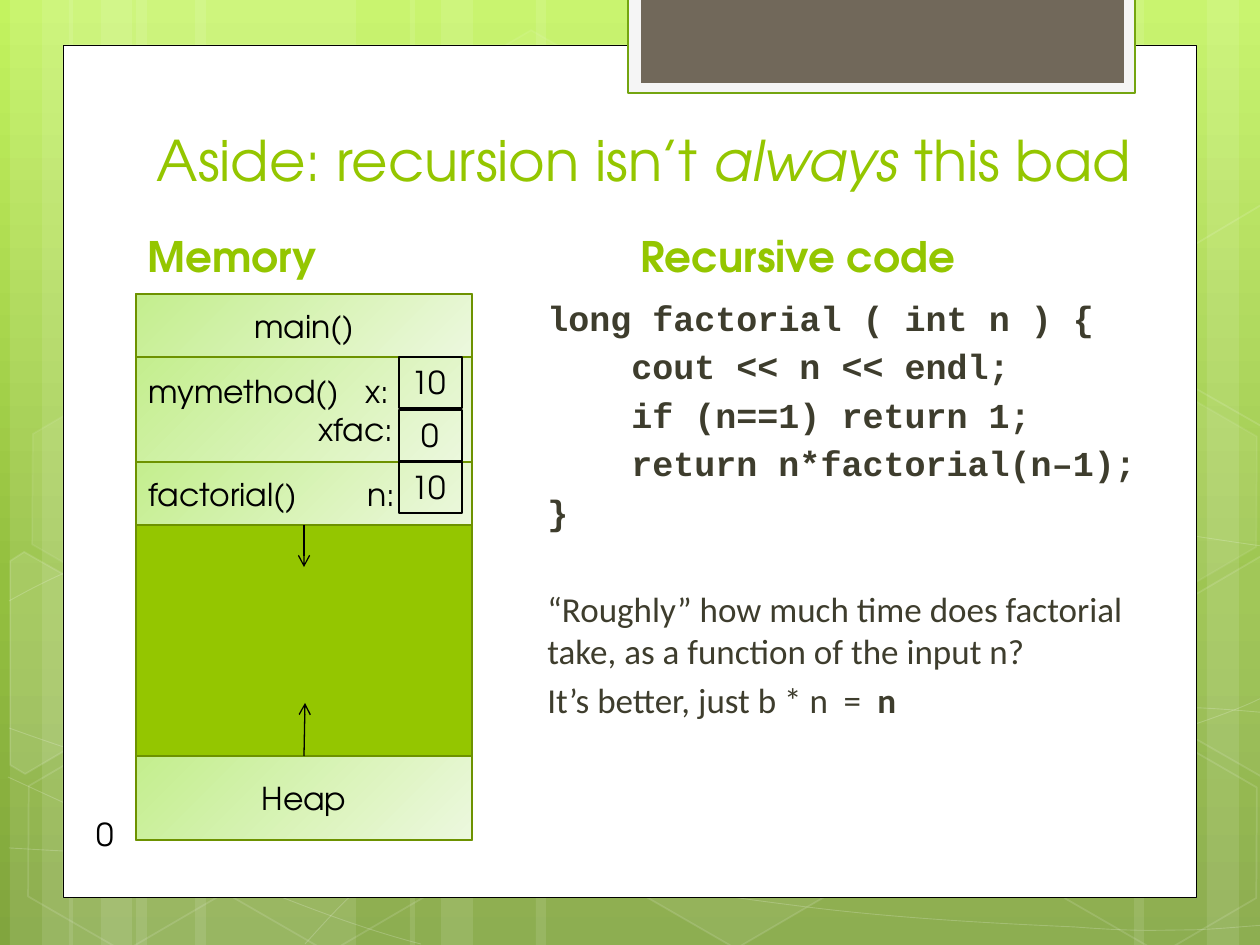
from copy import deepcopy
from math import cos, radians, sin
from lxml import etree
from pptx import Presentation
from pptx.dml.color import RGBColor
from pptx.enum.shapes import MSO_CONNECTOR, MSO_SHAPE
from pptx.enum.text import MSO_ANCHOR, MSO_AUTO_SIZE, PP_ALIGN
from pptx.oxml.ns import qn
from pptx.util import Pt

PX = 914400 / 126
RECT, HEXAGON = MSO_SHAPE.RECTANGLE, MSO_SHAPE.HEXAGON
STRAIGHT = MSO_CONNECTOR.STRAIGHT
TOP, MIDDLE, BOTTOM = MSO_ANCHOR.TOP, MSO_ANCHOR.MIDDLE, MSO_ANCHOR.BOTTOM
LEFT, CENTER = PP_ALIGN.LEFT, PP_ALIGN.CENTER
NO_FIT = MSO_AUTO_SIZE.NONE

WHITE = RGBColor(0xFF, 0xFF, 0xFF)
BLACK = RGBColor(0, 0, 0)
LIME = RGBColor(0x94, 0xC6, 0x00)
OLIVE = RGBColor(0x6D, 0x92, 0x00)
TAB_EDGE = RGBColor(0x74, 0xA5, 0x10)
TAB_RIM = RGBColor(0xF5, 0xF5, 0xF5)
TAUPE = RGBColor(0x71, 0x68, 0x5A)
INK = RGBColor(0x3E, 0x3D, 0x2D)
FRAME_COLORS = (RGBColor(0xC4, 0xEE, 0x8E), RGBColor(0xEC, 0xF8, 0xDE))
SKY = (RGBColor(0xC3, 0xF3, 0x5F), RGBColor(0x93, 0xBF, 0x3F), RGBColor(0x81, 0xA5, 0x3E))
DISPLAY, BODY, CODE = "TeX Gyre Adventor", "Calibri", "Courier New"


def paint(shape, fill=None, line=None, width=1, fill_alpha=100, line_alpha=100):
    shape.shadow.inherit = False
    for part, color, alpha in ((shape.fill, fill, fill_alpha), (shape.line.fill, line, line_alpha)):
        if color is None:
            part.background()
            continue
        part.solid()
        part.fore_color.rgb = color
        if alpha < 100:
            owner = shape.element.spPr if part is shape.fill else shape.line._get_or_add_ln()
            tint = owner.find(qn("a:solidFill"))[0]
            etree.SubElement(tint, qn("a:alpha"), val=str(alpha * 1000))
    if line is not None:
        shape.line.width = Pt(width)


def write(paragraph, text, size, font, color, bold=False, italic=False):
    run = paragraph.add_run()
    run.text = text
    run.font.size, run.font.name = Pt(size), font
    run.font.bold, run.font.italic = bold, italic
    run.font.color.rgb = color


prs = Presentation()
prs.slide_width, prs.slide_height = round(1260 * PX), round(945 * PX)
slide = prs.slides.add_slide(prs.slide_layouts[5])
shapes = slide.shapes

backdrop = slide.background.fill
backdrop.gradient()
backdrop.gradient_angle = 270
stop_list = slide.element.find(".//" + qn("a:gsLst"))
stop_list.append(deepcopy(stop_list[-1]))
for stop, color, position in zip(backdrop.gradient_stops, SKY, (0, 0.62, 1)):
    stop.color.rgb = color
    stop.position = position

for left, width in ((136, 220), (10, 63), (42, 105), (195, 220), (69, 63), (101, 105),
                    (924, 220), (1207, 63), (1134, 105), (536, 388), (410, 63), (441, 105)):
    band = shapes.add_shape(RECT, *(round(v * PX) for v in (left, 0, width, 945)))
    paint(band, WHITE, fill_alpha=10)

curves = (
    ((9, 848), (77, 852), (145, 856), (239, 854), (334, 853), (451, 851), (577, 838),
     (703, 825), (882, 801), (998, 777), (1113, 753), (1231, 716), (1269, 694)),
    ((9, 601), (45, 581), (82, 562), (152, 543), (224, 524), (326, 496), (437, 488),
     (549, 479), (685, 478), (824, 488), (963, 498), (1193, 537), (1269, 547)),
    ((8, 777), (160, 847), (311, 916), (421, 944)),
    ((9, 728), (48, 742), (88, 756), (161, 776), (234, 795), (344, 827), (450, 848),
     (554, 869), (687, 892), (791, 905), (896, 919), (1008, 924), (1075, 927),
     (1140, 932), (1158, 930), (1191, 930), (1223, 929), (1246, 926), (1269, 925)),
    ((305, 944), (328, 919), (350, 893), (381, 871), (411, 848), (454, 822), (489, 805),
     (524, 789), (546, 780), (592, 767), (638, 754), (722, 737), (766, 728),
     (811, 719), (818, 719), (857, 717), (896, 713), (958, 709), (1000, 708),
     (1045, 707), (1116, 708), (1116, 708), (1144, 708), (1173, 708), (1201, 708),
     (1223, 709), (1245, 711), (1268, 713)),
)
for knots in curves:
    start, *rest = [(x * PX, y * PX) for x, y in knots]
    builder = shapes.build_freeform(*start)
    builder.add_line_segments(rest, close=False)
    curve = builder.convert_to_shape()
    segments = curve.element.findall(".//" + qn("a:lnTo"))
    for i in range(0, len(segments), 3):
        bend = etree.SubElement(segments[i].getparent(), qn("a:cubicBezTo"))
        for segment in segments[i:i + 3]:
            bend.append(segment[0])
            segment.getparent().remove(segment)
    paint(curve, None, WHITE, 0.5, line_alpha=20)

for left, top, fill_alpha, line_alpha in (
        (421, 45, 4, 8), (626, 742, 6, 12), (14, 745, 0, 12), (18, 393, 7, 8), (219, 746, 0, 12),
        (949, 571, 10, 12), (1051, 747, 0, 12), (1051, 396, 7, 8)):
    cell = shapes.add_shape(HEXAGON, *(round(v * PX) for v in (left, top, 220, 192)))
    cell.adjustments[0] = 0.285
    cell.rotation = 30
    paint(cell, WHITE if fill_alpha else None, WHITE, 1, fill_alpha, line_alpha)

turn_cos, turn_sin = cos(radians(30)), sin(radians(30))
for fill_alpha, (mid_x, mid_y), corners in (
        (10, (45, 674), ((10, 561), (24, 552), (121, 607), (120, 718), (25, 774), (10, 765))),
        (4, (1241, 655), ((1167, 611), (1261, 556), (1271, 562), (1271, 772), (1263, 777),
                          (1167, 722))),
        (0, (1241, 304), ((1167, 261), (1261, 205), (1273, 212), (1271, 422), (1263, 427),
                          (1167, 372)))):
    points = [((mid_x + (x - mid_x) * turn_cos + (y - mid_y) * turn_sin) * PX,
               (mid_y - (x - mid_x) * turn_sin + (y - mid_y) * turn_cos) * PX)
              for x, y in corners]
    builder = shapes.build_freeform(*points[0])
    builder.add_line_segments(points[1:])
    cut_cell = builder.convert_to_shape()
    cut_cell.rotation = 30
    paint(cut_cell, WHITE if fill_alpha else None, WHITE, 1, fill_alpha, 12)

for place, fill, line, width in (
        ((63, 45, 1134, 853), WHITE, BLACK, 0.5),
        ((628, -3, 507, 96), TAB_RIM, TAB_EDGE, 1.25),
        ((641, -3, 483, 86), TAUPE, None, 1),
        ((136, 294, 336, 546), LIME, OLIVE, 1.25)):
    paint(shapes.add_shape(RECT, *(round(v * PX) for v in place)), fill, line, width)

title = shapes.title
title.left, title.top, title.width, title.height = (round(v * PX) for v in (144, 42, 1022, 157))
title.element.getparent().append(title.element)
title.text_frame.auto_size = NO_FIT
title.text_frame.vertical_anchor = BOTTOM
heading = title.text_frame.paragraphs[0]
heading.alignment = LEFT
for text, italic in (("Aside: recursion isn’t ", False), ("always ", True), ("this bad", False)):
    write(heading, text, 32, DISPLAY, LIME, italic=italic)

for left, text in ((135, "Memory"), (628, "Recursive code")):
    caption = shapes.add_textbox(*(round(v * PX) for v in (left, 199, 421, 88))).text_frame
    caption.word_wrap = True
    caption.vertical_anchor = BOTTOM
    write(caption.paragraphs[0], text, 24, DISPLAY, LIME, bold=True)

lesson = shapes.add_textbox(*(round(v * PX) for v in (526, 290, 640, 592))).text_frame
lesson.word_wrap = True
for i, (margin, before, runs) in enumerate((
        (9, 3.7, (("long factorial ( int n ) {", CODE, True),)),
        (93, 3.7, (("cout << n << endl;", CODE, True),)),
        (93, 3.7, (("if (n==1) return 1;", CODE, True),)),
        (93, 3.7, (("return n*factorial(n–1);", CODE, True),)),
        (9, 3.7, (("}", CODE, True),)),
        (9, 31.3, (("“Roughly” how much time does factorial take, as a function of the input n?",
                    BODY, False),)),
        (9, 4, (("It’s better, just b * n  = ", BODY, False), (" n", BODY, True))))):
    line = lesson.add_paragraph() if i else lesson.paragraphs[0]
    line.space_before = Pt(before)
    line._p.get_or_add_pPr().set("marL", str(round(margin * PX)))
    for text, font, bold in runs:
        write(line, text, 20, font, INK, bold=bold)

for top, height, align, rows in (
        (294, 63, CENTER, (("main()", 0),)),
        (756, 84, CENTER, (("Heap", 0),)),
        (357, 105, LEFT, (("mymethod()\tx:", 241), ("\txfac:", 245))),
        (462, 63, LEFT, (("factorial()\tn:", 247),))):
    frame = shapes.add_shape(RECT, *(round(v * PX) for v in (136, top, 336, height)))
    paint(frame, WHITE, OLIVE, 1.25)
    frame.fill.gradient()
    frame.fill.gradient_angle = 315
    for stop, color in zip(frame.fill.gradient_stops, FRAME_COLORS):
        stop.color.rgb = color
    frame.text_frame.vertical_anchor = MIDDLE
    for i, (text, tab) in enumerate(rows):
        row = frame.text_frame.paragraphs[0] if i == 0 else frame.text_frame.add_paragraph()
        row.alignment = align
        if tab:
            tabs = etree.SubElement(row._p.get_or_add_pPr(), qn("a:tabLst"))
            etree.SubElement(tabs, qn("a:tab"), pos=str(round(tab * PX)), algn="r")
        write(row, text, 18, DISPLAY, BLACK)

for start, end in (((304, 525), (304, 567)), ((304, 756), (305, 703))):
    growth = shapes.add_connector(STRAIGHT, *(round(v * PX) for v in start + end))
    growth.line.color.rgb = BLACK
    growth.line.width = Pt(0.75)
    etree.SubElement(growth.line._get_or_add_ln(), qn("a:tailEnd"), type="arrow")
    etree.SubElement(growth.element.spPr, qn("a:effectLst"))

for left, top, width, text, align, edge in (
        (399, 462, 63, "10", LEFT, BLACK), (84, 809, 43, "0", LEFT, None),
        (399, 357, 63, "10", LEFT, BLACK), (399, 410, 63, "0", CENTER, BLACK)):
    value = shapes.add_textbox(*(round(v * PX) for v in (left, top, width, 51)))
    if edge is not None:
        value.line.color.rgb = edge
        value.line.width = Pt(0.75)
    value.text_frame.word_wrap = edge is not None
    value.text_frame.vertical_anchor = TOP
    value.text_frame.paragraphs[0].alignment = align
    write(value.text_frame.paragraphs[0], text, 18, DISPLAY, BLACK)

prs.save("out.pptx")
